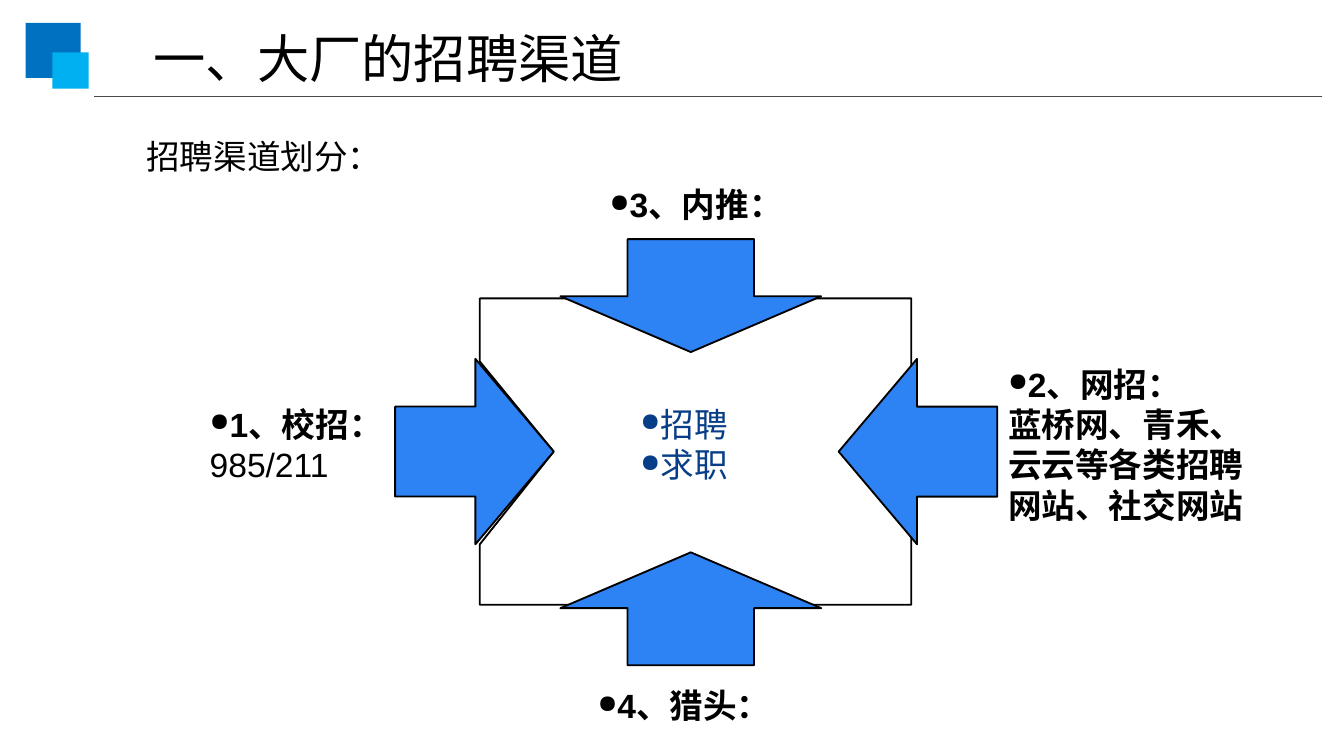
from dataclasses import dataclass

from lxml import etree
from pptx import Presentation
from pptx.dml.color import RGBColor
from pptx.enum.shapes import MSO_CONNECTOR, MSO_SHAPE
from pptx.enum.text import MSO_ANCHOR, MSO_AUTO_SIZE, PP_ALIGN
from pptx.oxml.ns import qn
from pptx.util import Pt

PX = 9144  # 100 px to the inch
SLIDE_WIDTH = 1000 * PX
SLIDE_HEIGHT = SLIDE_WIDTH * 9 // 16
RECT, ARROW = MSO_SHAPE.RECTANGLE, MSO_SHAPE.RIGHT_ARROW
STRAIGHT = MSO_CONNECTOR.STRAIGHT
TOP, MIDDLE, BOTTOM = MSO_ANCHOR.TOP, MSO_ANCHOR.MIDDLE, MSO_ANCHOR.BOTTOM
LEFT, CENTER = PP_ALIGN.LEFT, PP_ALIGN.CENTER
GROW = MSO_AUTO_SIZE.SHAPE_TO_FIT_TEXT

BLACK = RGBColor(0x00, 0x00, 0x00)
WHITE = RGBColor(0xFF, 0xFF, 0xFF)
DARK_BLUE = RGBColor(0x00, 0x70, 0xC0)
SKY_BLUE = RGBColor(0x00, 0xB0, 0xF0)
ARROW_BLUE = RGBColor(0x2D, 0x82, 0xF4)
CORE_BLUE = RGBColor(0x07, 0x3E, 0x87)
RULE_GRAY = RGBColor(0x4D, 0x49, 0x48)
CJK_FONT = "Noto Sans CJK SC"
LATIN_FONT = "Arial"


@dataclass(frozen=True)
class Box:
    left: int
    top: int
    width: int
    height: int

    def emu(self) -> tuple[int, int, int, int]:
        return self.left * PX, self.top * PX, self.width * PX, self.height * PX


@dataclass(frozen=True)
class Line:
    text: str
    bold: bool = False
    bullet: bool = False
    plain_tail: str = ""


@dataclass(frozen=True)
class Label:
    box: Box
    lines: tuple[Line, ...]
    size: int = 18
    font: str = LATIN_FONT
    color: RGBColor = BLACK
    anchor: MSO_ANCHOR = MIDDLE
    align: PP_ALIGN = LEFT
    margins: tuple[int, int] = (0, 0)
    wrap: bool = True


@dataclass(frozen=True)
class Arrow:
    box: Box
    rotation: int


LOGO_SQUARES = (
    (Box(19, 17, 41, 41), DARK_BLUE),
    (Box(39, 39, 27, 27), SKY_BLUE),
)
CORE_OUTLINE = ((357, 222), (357, 269), (412, 336), (357, 405),
                (357, 450), (678, 450), (678, 222))
ARROWS = (
    Arrow(Box(294, 267, 118, 138), 0),
    Arrow(Box(624, 267, 118, 138), 180),
    Arrow(Box(472, 123, 84, 194), 90),
    Arrow(Box(472, 356, 84, 194), 270),
)
LABELS = (
    Label(Box(104, 15, 482, 57), (Line("一、大厂的招聘渠道"),),
          size=28, font=CJK_FONT, anchor=TOP, margins=(10, 5)),
    Label(Box(99, 96, 195, 40), (Line("招聘渠道划分："),),
          font=CJK_FONT, anchor=TOP, margins=(10, 5), wrap=False),
    Label(Box(445, 137, 146, 30), (Line("3、内推：", True, True),),
          anchor=BOTTOM, align=CENTER),
    Label(Box(156, 300, 138, 61), (Line("1、校招：", True, True, "985/211"),)),
    Label(Box(429, 300, 160, 61),
          (Line("招聘", bullet=True), Line("求职", bullet=True)),
          font=CJK_FONT, color=CORE_BLUE, align=CENTER),
    Label(Box(750, 270, 192, 121),
          (Line("2、网招：", True, True),
           Line("蓝桥网、青禾、云云等各类招聘网站、社交网站", True))),
    Label(Box(429, 510, 160, 30), (Line("4、猎头：", True, True),),
          align=CENTER),
)


def paint(shape, fill: RGBColor, outlined: bool) -> None:
    shape.shadow.inherit = False
    shape.fill.solid()
    shape.fill.fore_color.rgb = fill
    if outlined:
        shape.line.color.rgb = BLACK
        shape.line.width = Pt(1)
    else:
        shape.line.fill.background()


def add_title_rule(slide) -> None:
    rule = slide.shapes.add_connector(STRAIGHT, 984 * PX, 72 * PX, 70 * PX, 72 * PX)
    rule.line.color.rgb = RULE_GRAY
    rule.line.width = Pt(0.75)
    etree.SubElement(rule._element.spPr, qn("a:effectLst"))


def add_core(slide) -> None:
    """Draw the central panel, notched where the left arrow enters it."""
    start, *rest = CORE_OUTLINE
    builder = slide.shapes.build_freeform(*start, scale=PX)
    builder.add_line_segments(rest, close=True)
    paint(builder.convert_to_shape(), WHITE, True)


def add_arrow(slide, arrow: Arrow) -> None:
    shape = slide.shapes.add_shape(ARROW, *arrow.box.emu())
    shape.adjustments[0] = 0.485
    shape.adjustments[1] = 0.494
    shape.rotation = arrow.rotation
    paint(shape, ARROW_BLUE, True)


def add_bullet(paragraph) -> None:
    properties = paragraph._p.get_or_add_pPr()
    properties.set("marL", "0")
    properties.set("indent", "0")
    etree.SubElement(properties, qn("a:buSzPct")).set("val", "75000")
    etree.SubElement(properties, qn("a:buChar")).set("char", "●")


def format_run(run, label: Label, bold: bool) -> None:
    run.font.size = Pt(label.size)
    run.font.bold = bold
    run.font.color.rgb = label.color
    run.font.name = label.font
    east_asian = etree.SubElement(run._r.get_or_add_rPr(), qn("a:ea"))
    east_asian.set("typeface", CJK_FONT)


def add_label(slide, label: Label) -> None:
    frame = slide.shapes.add_textbox(*label.box.emu()).text_frame
    frame.word_wrap = label.wrap
    frame.auto_size = GROW
    frame.vertical_anchor = label.anchor
    side, end = label.margins
    frame.margin_left = frame.margin_right = side * PX
    frame.margin_top = frame.margin_bottom = end * PX
    frame.text = "\n".join(line.text for line in label.lines)
    for paragraph, line in zip(frame.paragraphs, label.lines):
        paragraph.alignment = label.align
        if line.bullet:
            add_bullet(paragraph)
        format_run(paragraph.runs[0], label, line.bold)
        if line.plain_tail:
            tail = paragraph.add_run()
            tail.text = line.plain_tail
            format_run(tail, label, False)


def main() -> None:
    deck = Presentation()
    deck.slide_width, deck.slide_height = SLIDE_WIDTH, SLIDE_HEIGHT
    slide = deck.slides.add_slide(deck.slide_layouts[6])
    for box, color in LOGO_SQUARES:
        paint(slide.shapes.add_shape(RECT, *box.emu()), color, False)
    add_title_rule(slide)
    add_core(slide)
    for arrow in ARROWS:
        add_arrow(slide, arrow)
    for label in LABELS:
        add_label(slide, label)
    deck.save("out.pptx")


if __name__ == "__main__":
    main()
